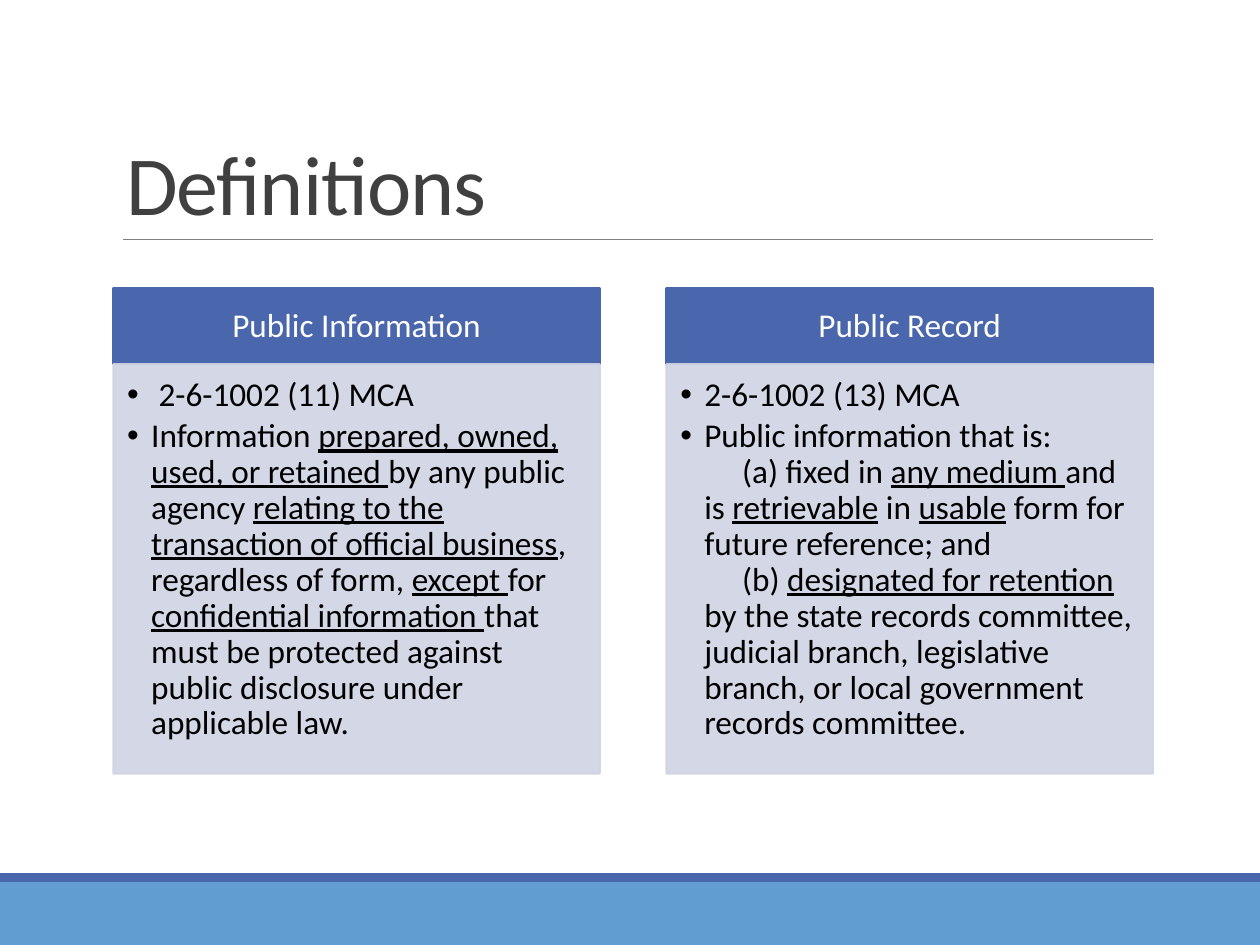
"""Build the Definitions slide with two headed panels."""
from lxml import etree
from pptx import Presentation
from pptx.dml.color import RGBColor
from pptx.enum.shapes import MSO_CONNECTOR, MSO_SHAPE
from pptx.enum.text import MSO_ANCHOR, MSO_AUTO_SIZE, PP_ALIGN
from pptx.oxml.ns import qn
from pptx.util import Inches, Pt

RECT, LINE = MSO_SHAPE.RECTANGLE, MSO_CONNECTOR.STRAIGHT
TOP, MIDDLE, BOTTOM = MSO_ANCHOR.TOP, MSO_ANCHOR.MIDDLE, MSO_ANCHOR.BOTTOM
LEFT, CENTER, FIXED = PP_ALIGN.LEFT, PP_ALIGN.CENTER, MSO_AUTO_SIZE.NONE
FONT, BLUE, PALE = "Calibri", "4A66AC", "D0D3E3"

TITLE = "Definitions"
PANELS = [
    ("Public Information", [
        ("item", " 2-6-1002 (11) MCA"),
        ("item", "Information _prepared, owned, used, or retained _by any public agency "
                 "_relating to the transaction of official business_, regardless of form, "
                 "_except _for _confidential information _that must be protected against "
                 "public disclosure under applicable law."),
    ]),
    ("Public Record", [
        ("item", "2-6-1002 (13) MCA"),
        ("lead", "Public information that is:"),
        ("part", "(a) fixed in _any medium _and is _retrievable_ in _usable_ form for "
                 "future reference; and"),
        ("part", "(b) _designated for retention _by the state records committee, judicial "
                 "branch, legislative branch, or local government records committee."),
    ]),
]
BANDS = [(7, 0.5, "629DD1"), (6.93, 0.07, BLUE)]
X, STEP, WIDE = 0.9, 4.39, 3.86
HEAD_TOP, HEAD_TALL, BODY_TALL = 2.29, 0.6, 3.25
HANG = 0.19
FIRST = {"item": -HANG, "lead": -HANG, "part": 0.3}
AFTER = {"item": 2.85, "lead": 0, "part": 0}


def rgb(code):
    return RGBColor.from_string(code)


def place(box, x, y, w, h):
    box.left, box.top, box.width, box.height = map(Inches, (x, y, w, h))


def paint(box, code, alpha=None):
    box.fill.solid()
    box.fill.fore_color.rgb = rgb(code)
    box.line.color.rgb = rgb(code)
    box.line.width = Pt(1.25)
    if alpha:
        for node in box._element.spPr.iter(qn("a:srgbClr")):
            etree.SubElement(node, qn("a:alpha"), val=str(alpha * 1000))


def frame(box, anchor, insets):
    text = box.text_frame
    text.word_wrap, text.auto_size, text.vertical_anchor = True, FIXED, anchor
    (text.margin_left, text.margin_top,
     text.margin_right, text.margin_bottom) = map(Inches, insets)
    return text


def style(para, size, code, align=LEFT, lines=0.9, after=0):
    para.alignment, para.line_spacing = align, lines
    para.space_before, para.space_after = Pt(0), Pt(after)
    font = para.font
    font.name, font.size, font.bold = FONT, Pt(size), False
    font.color.rgb = rgb(code)


def write(para, kind, words):
    for i, part in enumerate(words.split("_")):
        run = para.add_run()
        run.text = part
        if i % 2:
            run.font.underline = True
    props = para._p.get_or_add_pPr()
    props.set("marL", str(Inches(HANG)))
    props.set("indent", str(Inches(FIRST[kind])))
    if kind == "part":
        etree.SubElement(props, qn("a:buNone"))
    style(para, 19, "000000", after=AFTER[kind])


def panel(head, body, x, name, items):
    place(head, x, HEAD_TOP, WIDE, HEAD_TALL)
    paint(head, BLUE)
    text = frame(head, MIDDLE, (0.15, 0.08, 0.15, 0.08))
    text.text = name
    style(text.paragraphs[0], 19, "FFFFFF", CENTER)
    place(body, x, HEAD_TOP + HEAD_TALL, WIDE, BODY_TALL)
    paint(body, PALE, 90)
    text = frame(body, TOP, (0.11, 0.11, 0.15, 0.17))
    for i, item in enumerate(items):
        write(text.add_paragraph() if i else text.paragraphs[0], *item)


def main():
    deck = Presentation()
    deck.slide_width, deck.slide_height = Inches(10), Inches(7.5)
    slide = deck.slides.add_slide(deck.slide_layouts.get_by_name("Comparison"))
    title, *slots = slide.placeholders

    for y, tall, code in BANDS:
        band = slide.shapes.add_shape(RECT, 0, Inches(y), Inches(10), Inches(tall))
        band.shadow.inherit = False
        band.fill.solid()
        band.fill.fore_color.rgb = rgb(code)
        band.line.fill.background()

    rule = slide.shapes.add_connector(LINE, *map(Inches, (0.98, 1.9, 9.15, 1.9)))
    rule.line.color.rgb, rule.line.width = rgb("808080"), Pt(0.5)
    etree.SubElement(rule._element.spPr, qn("a:effectLst"))

    place(title, X, 0.31, 8.25, 1.59)
    text = frame(title, BOTTOM, (0.1, 0.05, 0.1, 0.05))
    text.text = TITLE
    style(text.paragraphs[0], 48, "404040", lines=0.85)
    text.paragraphs[0].runs[0].font._element.set("spc", "-50")

    for i, (name, items) in enumerate(PANELS):
        panel(*slots[2 * i:2 * i + 2], X + i * STEP, name, items)
    deck.save("out.pptx")


if __name__ == "__main__":
    main()
